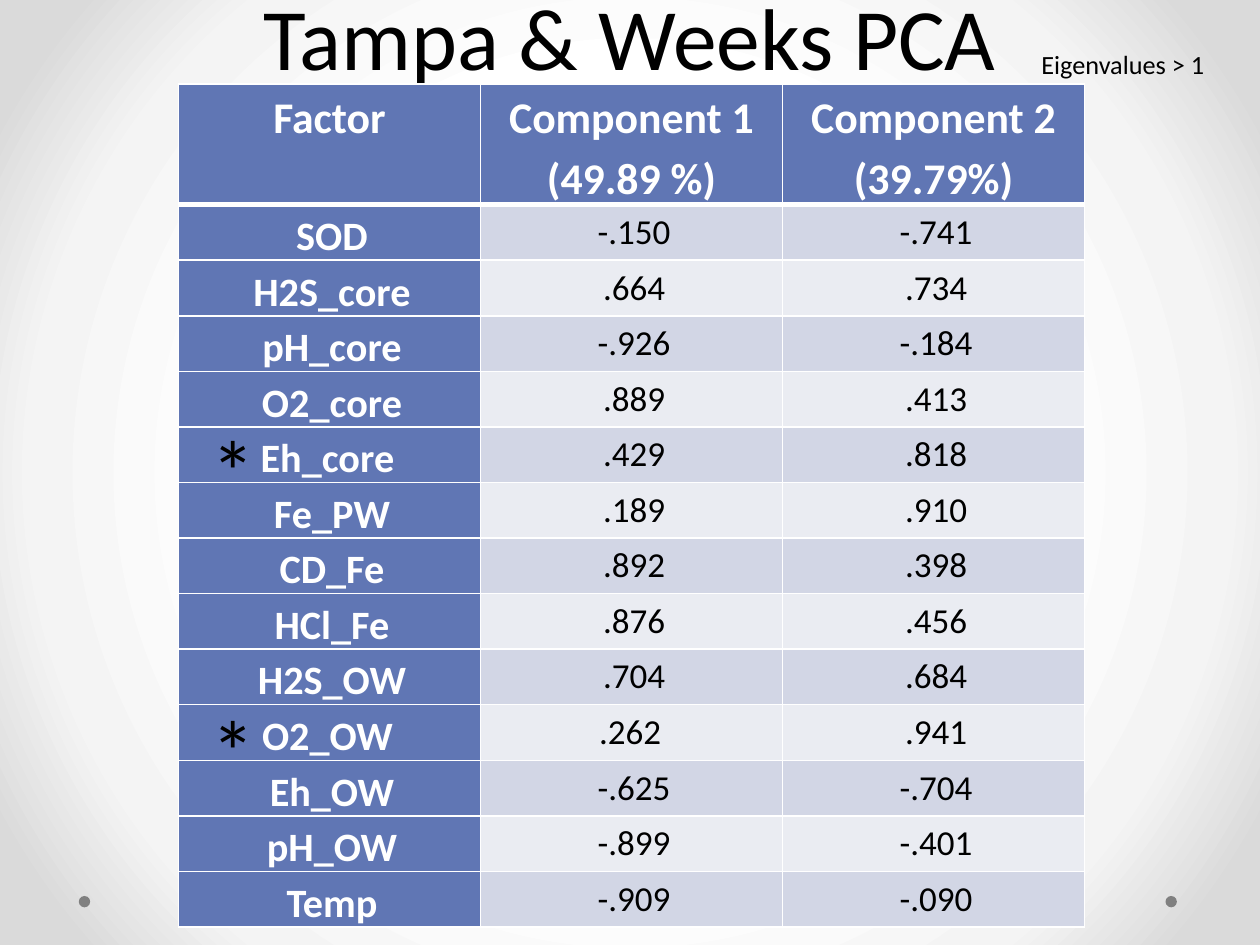
from lxml import etree
from pptx import Presentation
from pptx.dml.color import RGBColor
from pptx.enum.shapes import MSO_SHAPE
from pptx.enum.text import MSO_ANCHOR as Anchor, PP_ALIGN as Align
from pptx.oxml import parse_xml
from pptx.oxml.ns import nsdecls, qn
from pptx.util import Pt

COLORS = {
    "text": "000000", "white": "FFFFFF", "blue": "6076B4",
    "band_dark": "D2D6E5", "band_light": "EAECF2", "dot": "808080",
}
FONT = "Calibri"
BACKGROUND_STOPS = [(50, "FFFFFF"), (76, "F4F4F4"), (92, "DADADA")]

HEADERS = ["Factor", "Component 1\n(49.89 %)", "Component 2\n(39.79%)"]
LOADINGS = [
    ("SOD", "-.150", "-.741"),
    ("H2S_core", ".664", ".734"),
    ("pH_core", "-.926", "-.184"),
    ("O2_core", ".889", ".413"),
    ("Eh_core ", ".429", ".818"),
    ("Fe_PW", ".189", ".910"),
    ("CD_Fe", ".892", ".398"),
    ("HCl_Fe", ".876", ".456"),
    ("H2S_OW", ".704", ".684"),
    ("O2_OW ", ".262 ", ".941"),
    ("Eh_OW", "-.625", "-.704"),
    ("pH_OW", "-.899", "-.401"),
    ("Temp", "-.909", "-.090"),
]


def style_paragraph(paragraph, size, color, bold=False):
    font = paragraph.font
    font.name, font.size, font.bold = FONT, Pt(size), bold
    font.color.rgb = RGBColor.from_string(COLORS[color])


def add_text(text, left, top, width, height, size, wrap=True):
    shape = slide.shapes.add_textbox(Pt(left), Pt(top), Pt(width), Pt(height))
    shape.text_frame.word_wrap = wrap
    shape.text_frame.text = text
    style_paragraph(shape.text_frame.paragraphs[0], size, "text")
    return shape.text_frame


presentation = Presentation()
presentation.slide_width, presentation.slide_height = Pt(720), Pt(540)
slide = presentation.slides.add_slide(presentation.slide_layouts[6])

# Background: radial gradient
slide.background.fill.solid()
solid_fill = slide.element.find(".//" + qn("p:bgPr")).find(qn("a:solidFill"))
stops = "".join(
    f'<a:gs pos="{position * 1000}"><a:srgbClr val="{color}"/></a:gs>'
    for position, color in BACKGROUND_STOPS)
solid_fill.getparent().replace(solid_fill, parse_xml(
    f'<a:gradFill {nsdecls("a")} rotWithShape="1"><a:gsLst>{stops}</a:gsLst>'
    '<a:path path="circle">'
    '<a:fillToRect l="50000" t="50000" r="50000" b="50000"/>'
    '</a:path></a:gradFill>'))

# Corner dots
for left in (666, 45):
    dot = slide.shapes.add_shape(MSO_SHAPE.OVAL, Pt(left), Pt(512), Pt(6.5), Pt(6.5))
    dot.shadow.inherit = False
    dot.fill.solid()
    dot.fill.fore_color.rgb = RGBColor.from_string(COLORS["dot"])
    dot.line.fill.background()

# Title and note
title = add_text("Tampa & Weeks PCA", 36, -72, 648, 126, 50)
title.vertical_anchor = Anchor.BOTTOM
title.paragraphs[0].alignment = Align.CENTER
title.paragraphs[0].line_spacing = Pt(58)
add_text("Eigenvalues > 1", 588, 24, 132, 25, 15)

# Table of component loadings
rows = [HEADERS] + LOADINGS
header_height, row_height, column_width = 68.5, 31.75, 172.6
table = slide.shapes.add_table(
    len(rows), len(HEADERS), Pt(102), Pt(48), Pt(column_width * len(HEADERS)),
    Pt(header_height + row_height * len(LOADINGS))).table
for column in table.columns:
    column.width = Pt(column_width)

for row_index, values in enumerate(rows):
    is_header = row_index == 0
    table.rows[row_index].height = Pt(header_height if is_header else row_height)
    for column_index, value in enumerate(values):
        cell = table.cell(row_index, column_index)
        is_label = is_header or column_index == 0
        cell.margin_left = cell.margin_right = Pt(4.5)
        cell.margin_top = cell.margin_bottom = Pt(0)
        if is_label and not is_header:
            cell.vertical_anchor = Anchor.MIDDLE

        # White borders, thicker under the header
        properties = cell._tc.get_or_add_tcPr()
        for side in "LRTB":
            thick = (row_index, side) in ((0, "B"), (1, "T"))
            border = etree.SubElement(properties, qn(f"a:ln{side}"),
                                      w=str(Pt(3 if thick else 1)))
            border_fill = etree.SubElement(border, qn("a:solidFill"))
            etree.SubElement(border_fill, qn("a:srgbClr"), val=COLORS["white"])

        band = "band_dark" if row_index % 2 else "band_light"
        cell.fill.solid()
        cell.fill.fore_color.rgb = RGBColor.from_string(
            COLORS["blue" if is_label else band])

        cell.text_frame.text = value
        size = 25 if is_header else 23 if is_label else 20
        for paragraph in cell.text_frame.paragraphs:
            paragraph.alignment = Align.CENTER
            paragraph.line_spacing = 1.15
            style_paragraph(paragraph, size, "white" if is_label else "text", is_label)
            if not is_header:
                paragraph._p.get_or_add_pPr().set("marL", str(Pt(3)))

# Asterisks beside Eh_core and O2_OW
for top in (234, 394):
    add_text("*", 114, top, 40, 68, 50, wrap=False)

presentation.save("out.pptx")
